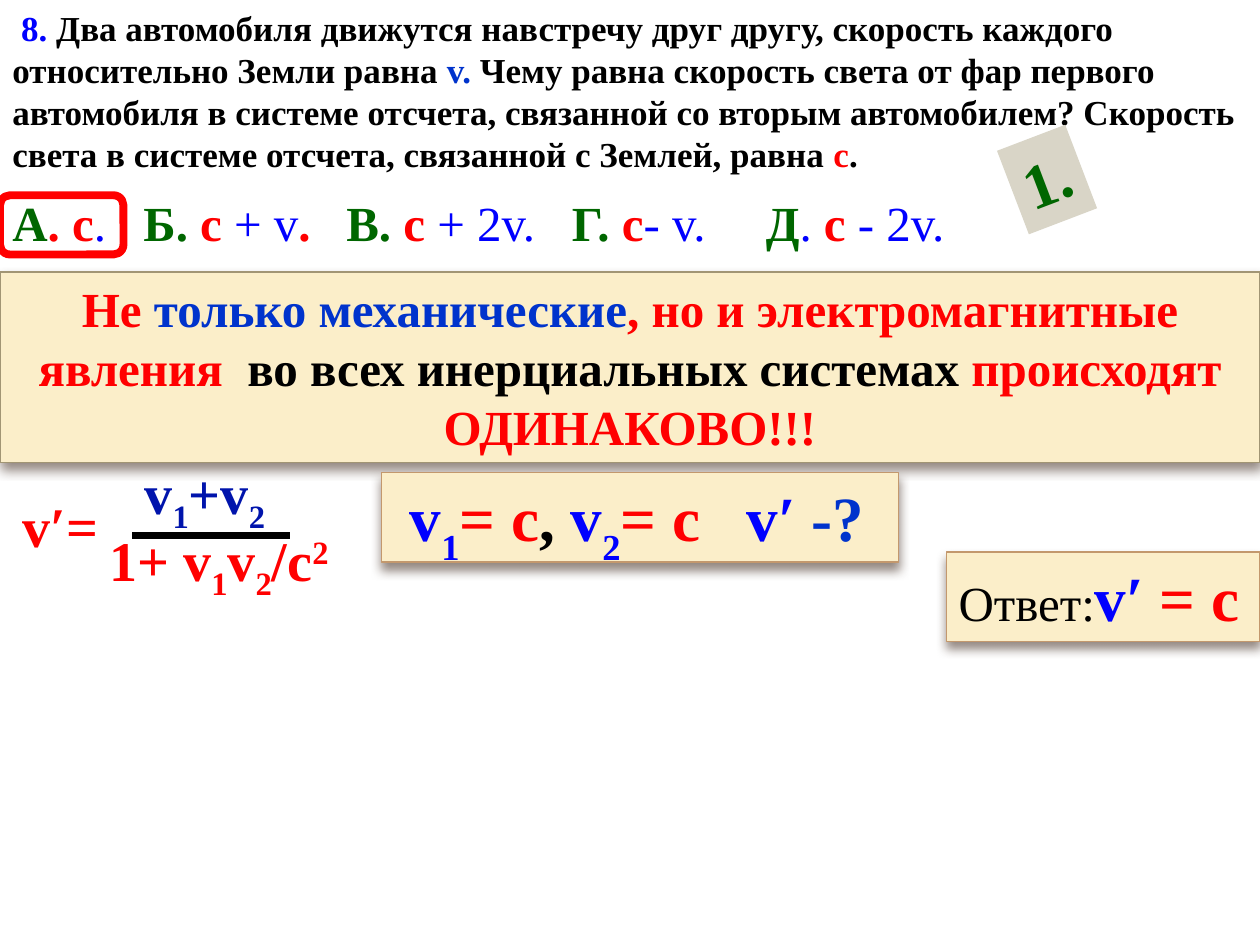
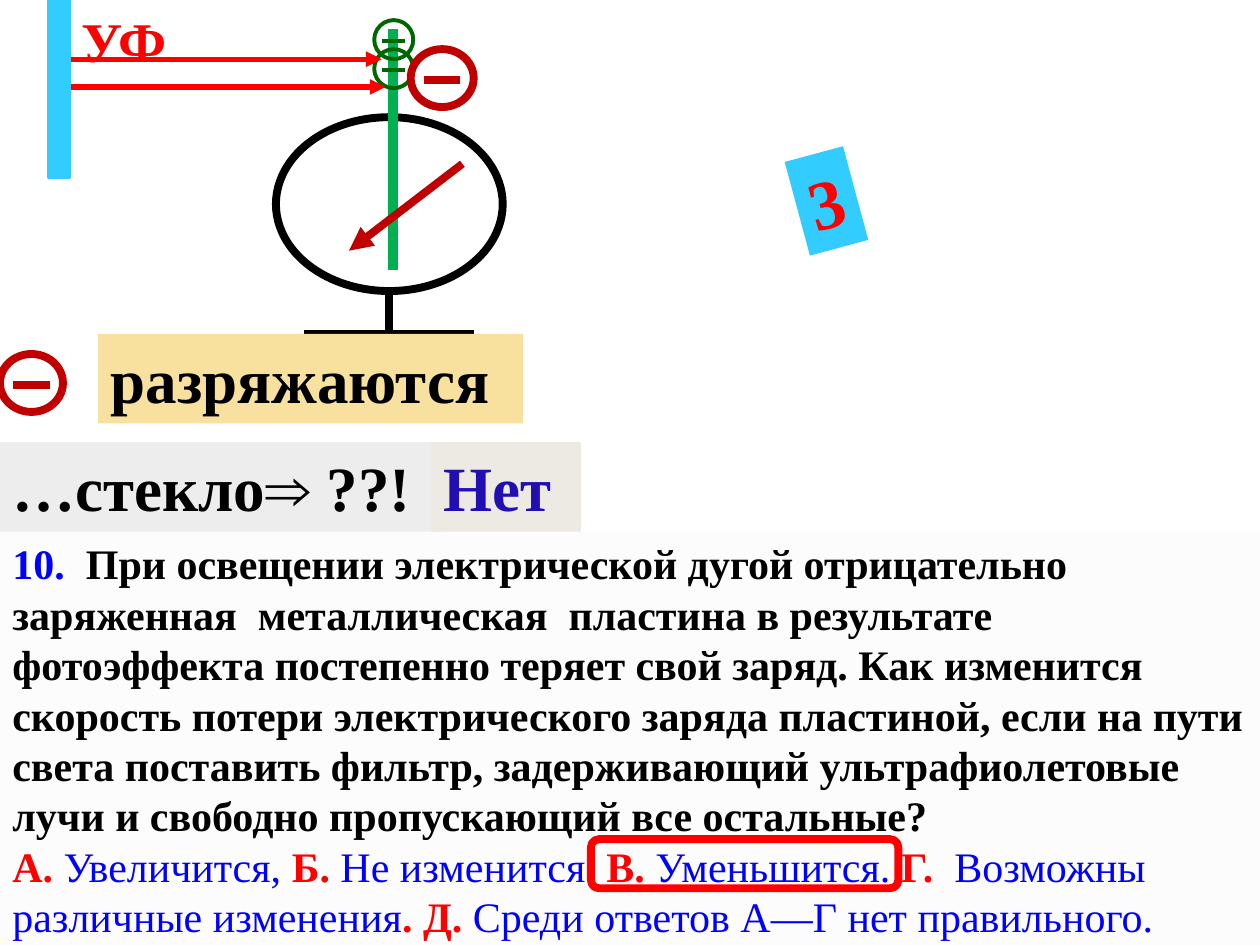
import pptx
import pptx.dml.color
import pptx.enum.shapes
import pptx.enum.text
import pptx.oxml
import pptx.oxml.ns
import pptx.util
from pptx.util import Inches

COLOURS = {
    "black": "000000", "red": "FF0000", "blue": "0000FF", "royal": "0033CC",
    "navy": "0014AC", "indigo": "220FB1", "dark green": "006600",
    "rod green": "00B050", "dark red": "C00000", "sky": "33CCFF",
    "cream": "FBEEC9", "cream edge": "C3986D", "law edge": "A19574",
    "shadow": "4E3B30", "sand": "F8E19F", "stone": "D9D5C7",
    "pale stone": "ECEAE3", "grey": "D9D9D9", "rose": "E1D1CC",
}
FONT = "Times New Roman"
SHAPES = pptx.enum.shapes.MSO_SHAPE
CENTER = pptx.enum.text.PP_ALIGN.CENTER
PLAIN = {"bold": False}


def colour(name):
    return pptx.dml.color.RGBColor.from_string(COLOURS[name])


def sub(percent=-25):
    """Run options that move text below (or above) the baseline."""
    return {"baseline": percent}


def add_xml(parent, xml):
    namespace = pptx.oxml.ns.nsdecls("a")
    element = pptx.oxml.parse_xml(xml.replace(">", f" {namespace}>", 1))
    parent.append(element)


class Board:
    """The shared style together with the slide being filled."""

    def __init__(self, deck):
        self.deck = deck
        self.slide = None

    def new_slide(self):
        self.slide = self.deck.slides.add_slide(self.deck.slide_layouts[6])

    def compose(self, paragraph, runs, size, align=None, before=0, after=0, tabs=()):
        """Fill a paragraph with (text, colour, options) runs, bold by default."""
        paragraph.font.name = FONT
        paragraph.font.size = pptx.util.Pt(size)
        paragraph.font.bold = True
        paragraph.alignment = align or pptx.enum.text.PP_ALIGN.LEFT
        paragraph.space_before = pptx.util.Pt(before)
        paragraph.space_after = pptx.util.Pt(after)
        if tabs:
            stops = "".join(f'<a:tab pos="{Inches(stop)}" algn="l"/>' for stop in tabs)
            properties = paragraph._p.get_or_add_pPr()
            add_xml(properties, f"<a:tabLst>{stops}</a:tabLst>")
            properties.insert(len(properties) - 2, properties[-1])
        for text, shade, *options in runs:
            if text == "\n":
                paragraph.add_line_break()
                continue
            options = options[0] if options else {}
            run = paragraph.add_run()
            run.text = text
            run.font.color.rgb = colour(shade)
            if "bold" in options:
                run.font.bold = options["bold"]
            if "size" in options:
                run.font.size = pptx.util.Pt(options["size"])
            if "baseline" in options:
                run._r.get_or_add_rPr().set("baseline", str(options["baseline"] * 1000))

    def text(self, box, runs, size, middle=False, **style):
        area = self.slide.shapes.add_textbox(*map(Inches, box))
        frame = area.text_frame
        frame.word_wrap = True
        if middle:
            frame.vertical_anchor = pptx.enum.text.MSO_ANCHOR.MIDDLE
        self.compose(frame.paragraphs[0], runs, size, **style)
        return frame

    def outline(self, box, kind, edge=None, weight=4.5, fill=None, opacity=100):
        figure = self.slide.shapes.add_shape(kind, *map(Inches, box))
        figure.shadow.inherit = False
        if fill:
            figure.fill.solid()
            figure.fill.fore_color.rgb = colour(fill)
            if opacity < 100:
                shade = figure._element.spPr.find(".//" + pptx.oxml.ns.qn("a:srgbClr"))
                add_xml(shade, f'<a:alpha val="{opacity * 1000}"></a:alpha>')
        else:
            figure.fill.background()
        if edge:
            figure.line.color.rgb = colour(edge)
            figure.line.width = pptx.util.Pt(weight)
        else:
            figure.line.fill.background()
        return figure

    def panel(self, box, runs, size, fill, edge=None, opacity=100, turn=0,
              wrap=False, grow=True, **style):
        """A filled rectangle with text; an edged one also casts a shadow."""
        figure = self.outline(box, SHAPES.RECTANGLE, edge, 0.79, fill, opacity)
        figure.rotation = turn
        if edge:
            effects = figure._element.spPr.find(pptx.oxml.ns.qn("a:effectLst"))
            add_xml(effects, '<a:outerShdw blurRad="76200" dist="50800" dir="5400000" '
                             f'rotWithShape="0"><a:srgbClr val="{COLOURS["shadow"]}">'
                             '<a:alpha val="60000"/></a:srgbClr></a:outerShdw>')
        frame = figure.text_frame
        frame.word_wrap = wrap
        frame.vertical_anchor = pptx.enum.text.MSO_ANCHOR.TOP
        if grow:
            frame.auto_size = pptx.enum.text.MSO_AUTO_SIZE.SHAPE_TO_FIT_TEXT
        self.compose(frame.paragraphs[0], runs, size, **style)

    def line(self, start, end, shade, weight, arrow=False):
        stroke = self.slide.shapes.add_connector(
            pptx.enum.shapes.MSO_CONNECTOR.STRAIGHT, *map(Inches, start + end))
        stroke.line.color.rgb = colour(shade)
        stroke.line.width = pptx.util.Pt(weight)
        if arrow:
            outline = stroke._element.spPr.find(pptx.oxml.ns.qn("a:ln"))
            add_xml(outline, '<a:tailEnd type="triangle"></a:tailEnd>')
        add_xml(stroke._element.spPr, "<a:effectLst></a:effectLst>")

    def negative_charge(self, left, top, width, height, shade, weight):
        self.outline((left, top, width, height), SHAPES.OVAL, shade, weight)
        middle, level = left + width / 2, top + height * 0.53
        reach = width * 0.29
        self.line((middle - reach, level), (middle + reach, level), shade, weight)

    def right_answer(self, *box):
        self.outline(box, SHAPES.ROUNDED_RECTANGLE, "red")


def build_light_speed(board):
    board.new_slide()
    question = board.text((0, 0, 10, 2.03), [
        (" 8. ", "blue"),
        ("Два автомобиля движутся навстречу друг другу, скорость каждого "
         "относительно Земли равна ", "black"),
        ("v. ", "royal"),
        ("Чему равна скорость света от фар первого автомобиля в системе отсчета, "
         "связанной со вторым автомобилем? Скорость света в системе отсчета, "
         "связанной с Землей, равна ", "black"),
        ("с", "red"), (".", "black"),
    ], 20, before=0.6, after=10)
    board.compose(question.add_paragraph(), [
        ("А", "dark green"), (". с", "red"), (".\t", "blue", PLAIN),
        ("Б. ", "dark green"), ("с", "red"), (" + v", "blue", PLAIN), (".\t", "red"),
        ("В. ", "dark green"), ("с", "red"), (" + 2v.\t", "blue", PLAIN),
        ("Г. ", "dark green"), ("с", "red"), ("- v.\t", "blue", PLAIN),
        ("Д", "dark green"), (".", "blue", PLAIN), (" с ", "red"),
        ("- 2v.", "blue", PLAIN),
    ], 28, before=0.6, after=10, tabs=(1.04, 2.65, 4.44, 5.98))

    board.panel((0, 2.16, 10, 1.51), [
        ("Не ", "red"), ("только механические", "royal"),
        (", но и электромагнитные явления  ", "red"),
        ("во всех инерциальных системах ", "black"),
        ("происходят ОДИНАКОВО!!!", "red"),
    ], 28, "cream", "law edge", wrap=True, align=CENTER)

    board.text((0.08, 3.81, 0.86, 0.72), [("v′=", "red")], 32, middle=True)
    board.text((1.05, 3.59, 1.56, 0.94), [
        ("v", "navy"), ("1", "navy", sub()), ("+v", "navy"), ("2", "navy", sub()),
    ], 32, after=10)
    board.text((0.77, 4.12, 2.31, 0.94), [
        ("1+ v", "red"), ("1", "red", sub()), ("v", "red"), ("2", "red", sub()),
        ("/c", "red"), ("2", "red", sub(30)),
    ], 32, after=10)
    board.line((1.05, 4.25), (2.3, 4.25), "black", 3.75)

    board.panel((8.02, 1.07, 0.58, 0.71), [("1.", "dark green")], 36, "stone", turn=339.1)
    board.panel((3.03, 3.75, 4.1, 0.71), [
        (" ", "royal"), ("v", "blue"), ("1", "blue", sub(-30)), ("= c", "red"),
        (", ", "black"), ("v", "blue"), ("2", "blue", sub(-30)), ("= c\t", "red"),
        ("v′", "blue"), (" -?", "royal"),
    ], 36, "cream", "cream edge", wrap=True, tabs=(2.8,))
    board.panel((7.51, 4.38, 2.49, 0.71), [
        ("Ответ:", "black", {"size": 28, "bold": False}),
        ("v′ ", "blue"), ("= c", "red"),
    ], 36, "cream", "cream edge", wrap=True)
    board.right_answer(0, 1.55, 0.98, 0.47)


def build_photoeffect(board):
    board.new_slide()
    # Electroscope: case, stand, rod and needle
    board.outline((2.19, 0.93, 1.8, 1.38), SHAPES.OVAL, "black")
    board.line((3.09, 2.31), (3.09, 2.66), "black", 4.5)
    board.line((2.41, 2.66), (3.76, 2.66), "black", 6)
    board.line((3.12, 0.23), (3.12, 2.14), "rod green", 6)
    board.line((3.67, 1.3), (2.77, 1.99), "dark red", 4.5, arrow=True)
    board.panel((0.78, 2.65, 3.37, 0.71), [("разряжаются", "black")], 36, "sand")

    for top in (0.16, 0.39):
        board.negative_charge(2.97, top, 0.31, 0.31, "dark green", 2.25)
    board.line((0.43, 0.69), (3.06, 0.69), "red", 3, arrow=True)
    board.text((0.55, 0, 1, 0.63), [("УФ", "red")], 32, after=10)
    board.line((0.39, 0.47), (3.03, 0.47), "red", 3, arrow=True)

    board.negative_charge(0, 2.81, 0.5, 0.46, "dark red", 4.5)
    board.panel((0, 3.51, 3.53, 0.71), [("…стекло⇒ ??!", "black")], 36, "grey", opacity=47)
    board.negative_charge(3.26, 0.39, 0.5, 0.46, "dark red", 4.5)
    board.panel((3.42, 3.51, 1.19, 0.71), [("Нет", "indigo")], 36, "pale stone")
    board.outline((0.39, 0, 0.16, 1.41), SHAPES.RECTANGLE, "sky", 2, "sky")

    board.panel((0, 4.22, 10, 3.28), [
        ("10.  ", "blue"),
        ("При освещении электрической дугой отрицательно заряженная  металлическая  "
         "пластина в результате  фотоэффекта постепенно теряет свой заряд. Как "
         "изменится скорость потери электрического заряда пластиной, если на пути "
         "света поставить фильтр, задерживающий ультрафиолетовые лучи и свободно "
         "пропускающий все остальные?", "black"),
        ("\n", "black"),
        ("А.", "red"), (" Увеличится, ", "blue", PLAIN),
        ("Б.", "red"), (" Не изменится. ", "blue", PLAIN),
        ("В.", "red"), (" Уменьшится. ", "blue", PLAIN),
        ("Г.", "red"), ("  Возможны различные изменения", "blue", PLAIN),
        (". Д.", "red"), (" Среди ответов А—Г нет правильного.", "blue", PLAIN),
    ], 24, "rose", opacity=5, wrap=True, grow=False, before=0.6, after=10)
    board.panel((6.32, 1.21, 0.48, 0.77), [("3", "red")], 40, "sky", turn=344.9)
    board.right_answer(4.69, 6.66, 2.44, 0.39)


def main():
    deck = pptx.Presentation()
    deck.slide_width, deck.slide_height = Inches(10), Inches(7.5)
    board = Board(deck)
    build_light_speed(board)
    build_photoeffect(board)
    deck.save("out.pptx")


if __name__ == "__main__":
    main()
